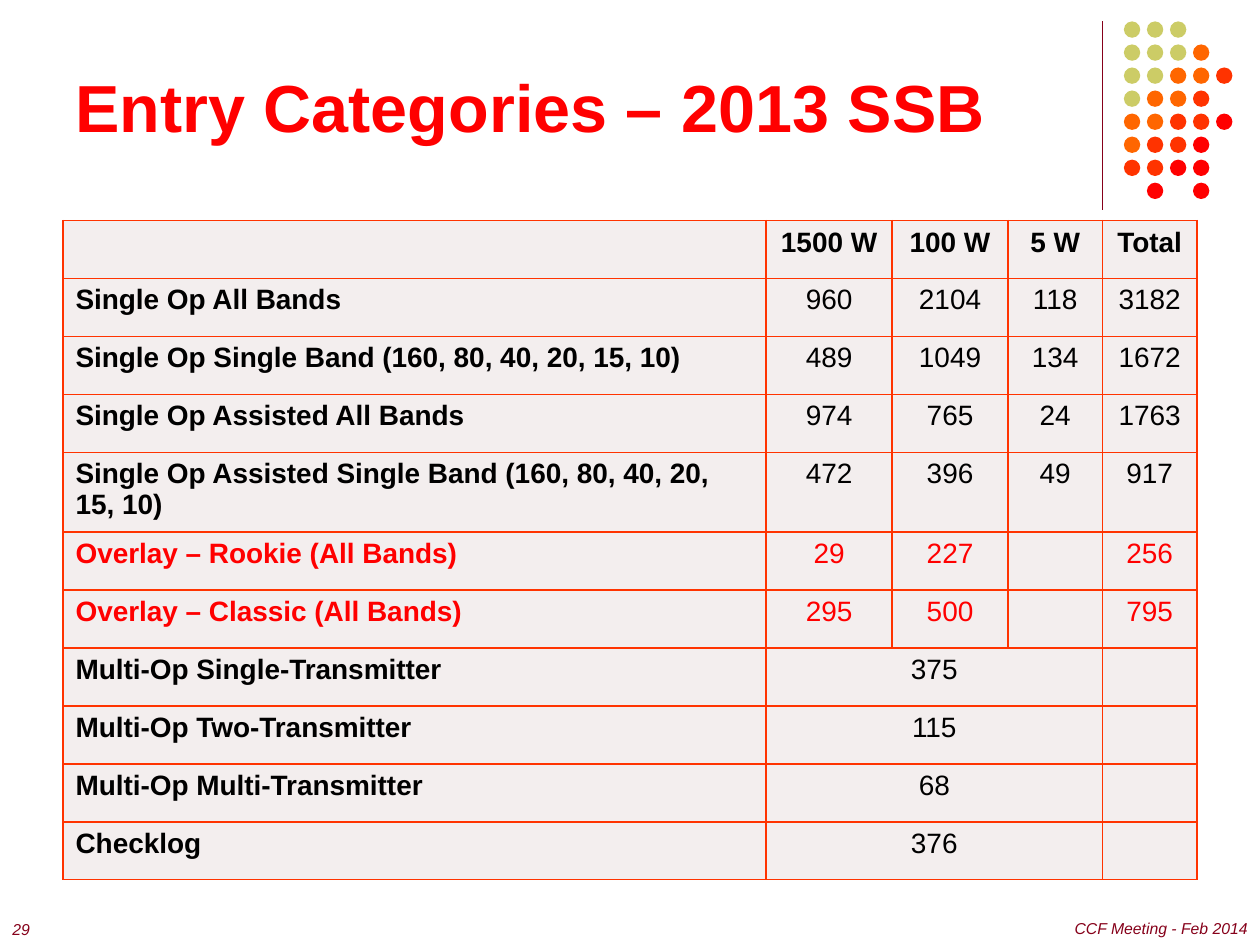
import pptx
import pptx.util
import pptx.dml.color
import pptx.enum.shapes
import pptx.enum.text
import pptx.oxml
import pptx.oxml.ns

Inches = pptx.util.Inches
Align = pptx.enum.text.PP_ALIGN
Middle = pptx.enum.text.MSO_ANCHOR.MIDDLE
Kinds = pptx.enum.shapes

HUES = {
    "red": "FF0000", "black": "000000", "wine": "86001A", "pale": "F3EEEE",
    "edge": "FF3300", "G": "CCCC66", "O": "FF6600", "V": "FF3300", "R": "FF0000",
}
DOTS = ["GGG", "GGGO", "GGOOV", "GOOV", "OOVVR", "OVVR", "VVRR", " R R"]
COLS = [5.58, 1, 0.92, 0.75, 0.75]
ROWS = [
    ["", "1500 W", "100 W", "5 W", "Total"],
    ["Single Op All Bands", "960", "2104", "118", "3182"],
    ["Single Op Single Band (160, 80, 40, 20, 15, 10)", "489", "1049", "134", "1672"],
    ["Single Op Assisted All Bands", "974", "765", "24", "1763"],
    ["Single Op Assisted Single Band (160, 80, 40, 20, 15, 10)", "472", "396", "49", "917"],
    ["Overlay – Rookie (All Bands)", "29", "227", "", "256"],
    ["Overlay – Classic (All Bands)", "295", "500", "", "795"],
    ["Multi-Op Single-Transmitter", "375"],
    ["Multi-Op Two-Transmitter", "115"],
    ["Multi-Op Multi-Transmitter", "68"],
    ["Checklog", "376"],
]


def tint(name):
    return pptx.dml.color.RGBColor.from_string(HUES[name])


class Deck:
    face = "Arial"

    def __init__(self, wide, high):
        self.prs = pptx.Presentation()
        self.prs.slide_width = Inches(wide)
        self.prs.slide_height = Inches(high)
        self.page = self.prs.slides.add_slide(self.prs.slide_layouts[6])

    def label(self, frame, text, hue, size, align=Align.LEFT, **style):
        para = frame.paragraphs[0]
        para.alignment = align
        run = para.add_run()
        run.text = text
        run.font.color.rgb = tint(hue)
        style.update(name=self.face, size=pptx.util.Pt(size))
        for key, value in style.items():
            setattr(run.font, key, value)

    def text(self, box, *words, **style):
        frame = self.page.shapes.add_textbox(*map(Inches, box)).text_frame
        frame.word_wrap = True
        frame.vertical_anchor = Middle
        self.label(frame, *words, **style)

    def rule(self, start, end, hue, width):
        line = self.page.shapes.add_connector(
            Kinds.MSO_CONNECTOR.STRAIGHT, *map(Inches, start + end))
        line.line.color.rgb = tint(hue)
        line.line.width = pptx.util.Pt(width)
        props = line._element.spPr
        props.append(pptx.oxml.parse_xml(
            f'<a:effectLst {pptx.oxml.ns.nsdecls("a")}/>'))

    def dot(self, left, top, size, hue):
        dot = self.page.shapes.add_shape(
            Kinds.MSO_SHAPE.OVAL, *map(Inches, (left, top, size, size)))
        dot.shadow.inherit = False
        dot.fill.solid()
        dot.fill.fore_color.rgb = tint(hue)
        dot.line.fill.background()

    def edge(self, cell):
        props = cell._tc.get_or_add_tcPr()
        for side in "LRTB":
            props.append(pptx.oxml.parse_xml(
                f'<a:ln{side} {pptx.oxml.ns.nsdecls("a")} w="12700"><a:solidFill>'
                f'<a:srgbClr val="{HUES["edge"]}"/></a:solidFill></a:ln{side}>'))

    def table(self, left, top, cols, rows, high):
        table = self.page.shapes.add_table(
            len(rows), len(cols), *map(Inches, (left, top, sum(cols), high * len(rows)))).table
        table.first_row = table.horz_banding = False
        for col, width in zip(table.columns, cols):
            col.width = Inches(width)
        for r, row in enumerate(rows):
            table.rows[r].height = Inches(high)
            hue = "red" if row[0].startswith("Overlay") else "black"
            for c in range(len(cols)):
                cell = table.cell(r, c)
                self.edge(cell)
                cell.fill.solid()
                cell.fill.fore_color.rgb = tint("pale")
                if c < len(row) and row[c]:
                    self.label(cell.text_frame, row[c], hue, 16,
                               Align.CENTER if c else Align.LEFT, bold=r == 0 or c == 0)
            if len(row) == 2:
                table.cell(r, 1).merge(table.cell(r, 3))


def main():
    deck = Deck(10, 7.5)
    deck.rule((8.75, 0.17), (8.75, 1.67), "wine", 0.75)
    step = 1.28 / 7
    for r, row in enumerate(DOTS):
        for c, hue in enumerate(row):
            if hue != " ":
                deck.dot(8.92 + c * step, 0.17 + r * step, 0.13, hue)
    deck.text((0.5, 0.13, 8.17, 1.42), "Entry Categories – 2013 SSB", "red", 38, bold=True)
    deck.table(0.5, 1.75, COLS, ROWS, 0.46)
    deck.text((0, 7.24, 0.42, 0.27), "29", "wine", 9, italic=True)
    deck.text((8.06, 7.23, 1.94, 0.27), "CCF Meeting - Feb 2014", "wine", 9,
              Align.RIGHT, italic=True)
    deck.prs.save("out.pptx")


if __name__ == "__main__":
    main()
